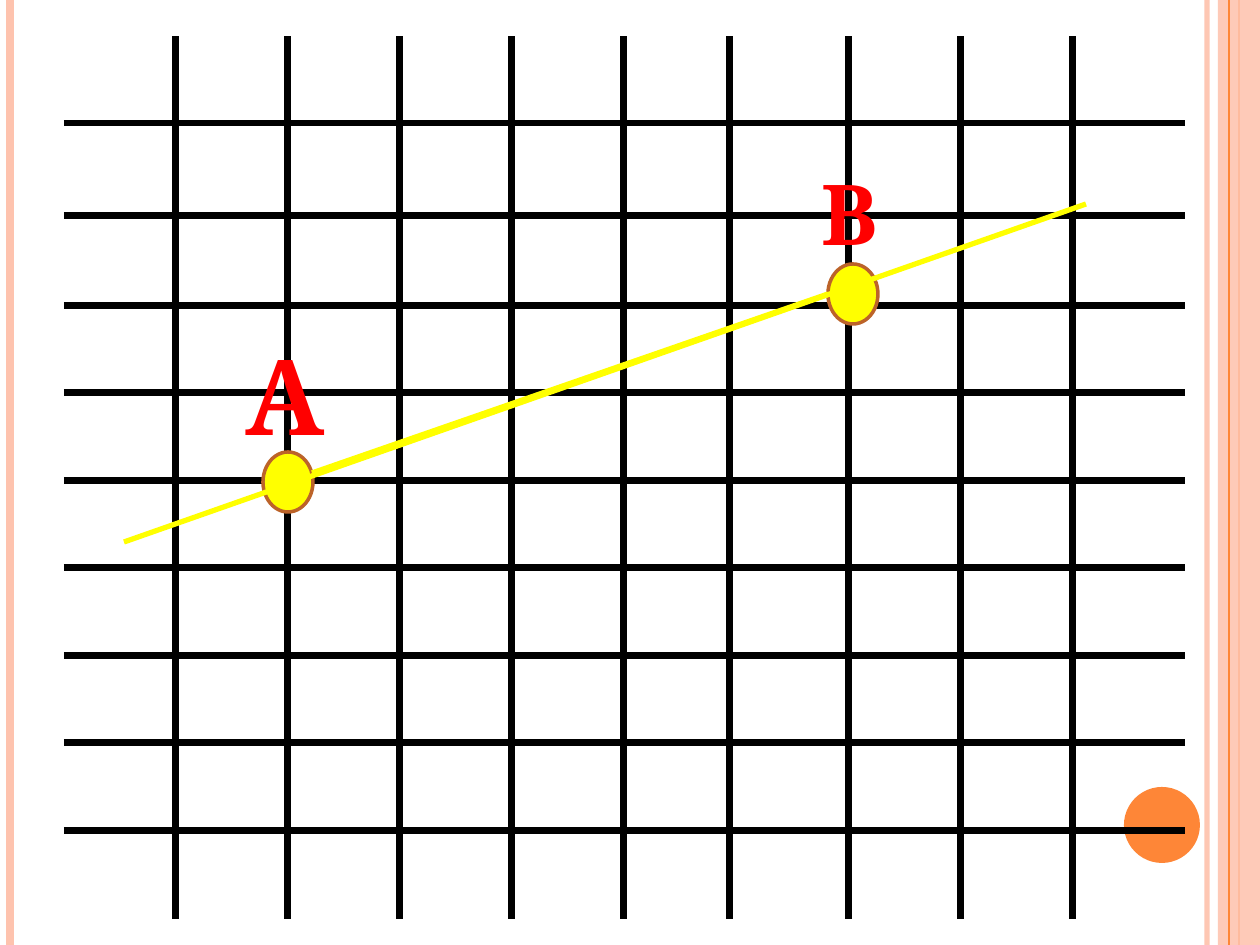
from dataclasses import dataclass
from itertools import pairwise
from typing import Optional

from lxml.etree import SubElement
from pptx import Presentation
from pptx.dml.color import RGBColor
from pptx.enum.shapes import MSO_CONNECTOR as Connector, MSO_SHAPE as Preset
from pptx.enum.text import MSO_AUTO_SIZE as AutoSize
from pptx.oxml.ns import qn
from pptx.util import Emu, Pt

PX_PER_INCH = 126
WIDTH, HEIGHT = 1260, 945

WHITE = RGBColor(0xFF, 0xFF, 0xFF)
BLACK = RGBColor(0x00, 0x00, 0x00)
PEACH = RGBColor(0xFE, 0xC3, 0xAE)
ORANGE = RGBColor(0xFE, 0x86, 0x37)
BROWN = RGBColor(0xBC, 0x63, 0x29)
YELLOW = RGBColor(0xFF, 0xFF, 0x00)
RED = RGBColor(0xFF, 0x00, 0x00)

COLUMN_EDGES = (64, 176, 288, 400, 512, 624, 730, 849, 961, 1073, 1185)
ROW_EDGES = (36, 123, 216, 306, 393, 481, 568, 656, 743, 831, 919)


@dataclass(frozen=True)
class Line:
    x1: int
    y1: int
    x2: int
    y2: int
    color: RGBColor
    weight: float
    opacity: int = 100


@dataclass(frozen=True)
class Figure:
    preset: Preset
    left: int
    top: int
    width: int
    height: int
    fill: RGBColor
    outline: Optional[RGBColor] = None
    opacity: int = 100


@dataclass(frozen=True)
class Label:
    letter: str
    left: int
    top: int
    width: int
    height: int
    size: int
    wrap: bool


STRIPES = (
    Line(1207, 0, 1207, HEIGHT, PEACH, 3, 93),
    Line(10, 0, 10, HEIGHT, PEACH, 4.5),
    Line(1239, 0, 1239, HEIGHT, ORANGE, 1.5),
)
SIDE_BAND = Figure(Preset.RECTANGLE, 1218, 0, 42, HEIGHT, PEACH, opacity=87)
BAND_STRIPE = Line(1229, 0, 1229, HEIGHT, ORANGE, 0.75)
PAGE_DISC = Figure(Preset.OVAL, 1124, 787, 76, 76, ORANGE)
POINTS = tuple(
    Figure(Preset.FLOWCHART_CONNECTOR, left, top, 50, 60, YELLOW, BROWN)
    for left, top in ((263, 452), (828, 264))
)
LABELS = (
    Label("А", 233, 324, 79, 140, 60, True),
    Label("В", 809, 155, 73, 115, 48, False),
)
SEGMENT = Line(312, 473, 828, 294, YELLOW, 3)
STRAIGHT_LINE = Line(124, 542, 1086, 204, YELLOW, 3)


def px(length: int) -> Emu:
    return Emu(round(length * 914400 / PX_PER_INCH))


def set_opacity(parent, percent: int) -> None:
    if percent < 100:
        color = next(parent.iter(qn("a:srgbClr")))
        SubElement(color, qn("a:alpha"), val=str(percent * 1000))


def draw_line(slide, line: Line) -> None:
    ends = (px(line.x1), px(line.y1), px(line.x2), px(line.y2))
    connector = slide.shapes.add_connector(Connector.STRAIGHT, *ends)
    connector.line.color.rgb = line.color
    connector.line.width = Pt(line.weight)
    properties = connector._element.spPr
    set_opacity(properties, line.opacity)
    SubElement(properties, qn("a:effectLst"))


def draw_figure(slide, figure: Figure) -> None:
    box = (px(figure.left), px(figure.top), px(figure.width), px(figure.height))
    shape = slide.shapes.add_shape(figure.preset, *box)
    shape.shadow.inherit = False
    shape.fill.solid()
    shape.fill.fore_color.rgb = figure.fill
    set_opacity(shape._element.spPr, figure.opacity)
    if figure.outline is None:
        shape.line.fill.background()
    else:
        shape.line.color.rgb = figure.outline
        shape.line.width = Pt(2)


def draw_label(slide, label: Label) -> None:
    box = (px(label.left), px(label.top), px(label.width), px(label.height))
    frame = slide.shapes.add_textbox(*box).text_frame
    frame.text = label.letter
    frame.word_wrap = label.wrap
    frame.auto_size = AutoSize.SHAPE_TO_FIT_TEXT
    font = frame.paragraphs[0].runs[0].font
    font.name = "Cambria"
    font.size = Pt(label.size)
    font.bold = True
    font.color.rgb = RED


def set_border(cell, side: str, visible: bool) -> None:
    properties = cell._tc.get_or_add_tcPr()
    border = SubElement(properties, qn(f"a:ln{side}"), w=str(Pt(4.5)))
    if visible:
        fill = SubElement(border, qn("a:solidFill"))
        SubElement(fill, qn("a:srgbClr"), val=str(BLACK))
    else:
        SubElement(border, qn("a:noFill"))


def draw_grid(slide) -> None:
    widths = [px(end - start) for start, end in pairwise(COLUMN_EDGES)]
    heights = [px(end - start) for start, end in pairwise(ROW_EDGES)]
    grid = slide.shapes.add_table(
        len(heights), len(widths), px(COLUMN_EDGES[0]), px(ROW_EDGES[0]),
        sum(widths), sum(heights),
    ).table
    grid.first_row = False
    grid.horz_banding = False
    for column, width in zip(grid.columns, widths):
        column.width = width
    for row, height in zip(grid.rows, heights):
        row.height = height
    last_row, last_column = len(heights) - 1, len(widths) - 1
    for r, row in enumerate(grid.rows):
        for c, cell in enumerate(row.cells):
            set_border(cell, "L", c > 0)
            set_border(cell, "R", c < last_column)
            set_border(cell, "T", r > 0)
            set_border(cell, "B", r < last_row)
            cell.fill.background()


def main() -> None:
    presentation = Presentation()
    presentation.slide_width = px(WIDTH)
    presentation.slide_height = px(HEIGHT)
    slide = presentation.slides.add_slide(presentation.slide_layouts[6])
    slide.background.fill.solid()
    slide.background.fill.fore_color.rgb = WHITE
    for stripe in STRIPES:
        draw_line(slide, stripe)
    draw_figure(slide, SIDE_BAND)
    draw_line(slide, BAND_STRIPE)
    draw_figure(slide, PAGE_DISC)
    draw_grid(slide)
    for point in POINTS:
        draw_figure(slide, point)
    for label in LABELS:
        draw_label(slide, label)
    draw_line(slide, SEGMENT)
    draw_line(slide, STRAIGHT_LINE)
    presentation.save("out.pptx")


if __name__ == "__main__":
    main()
